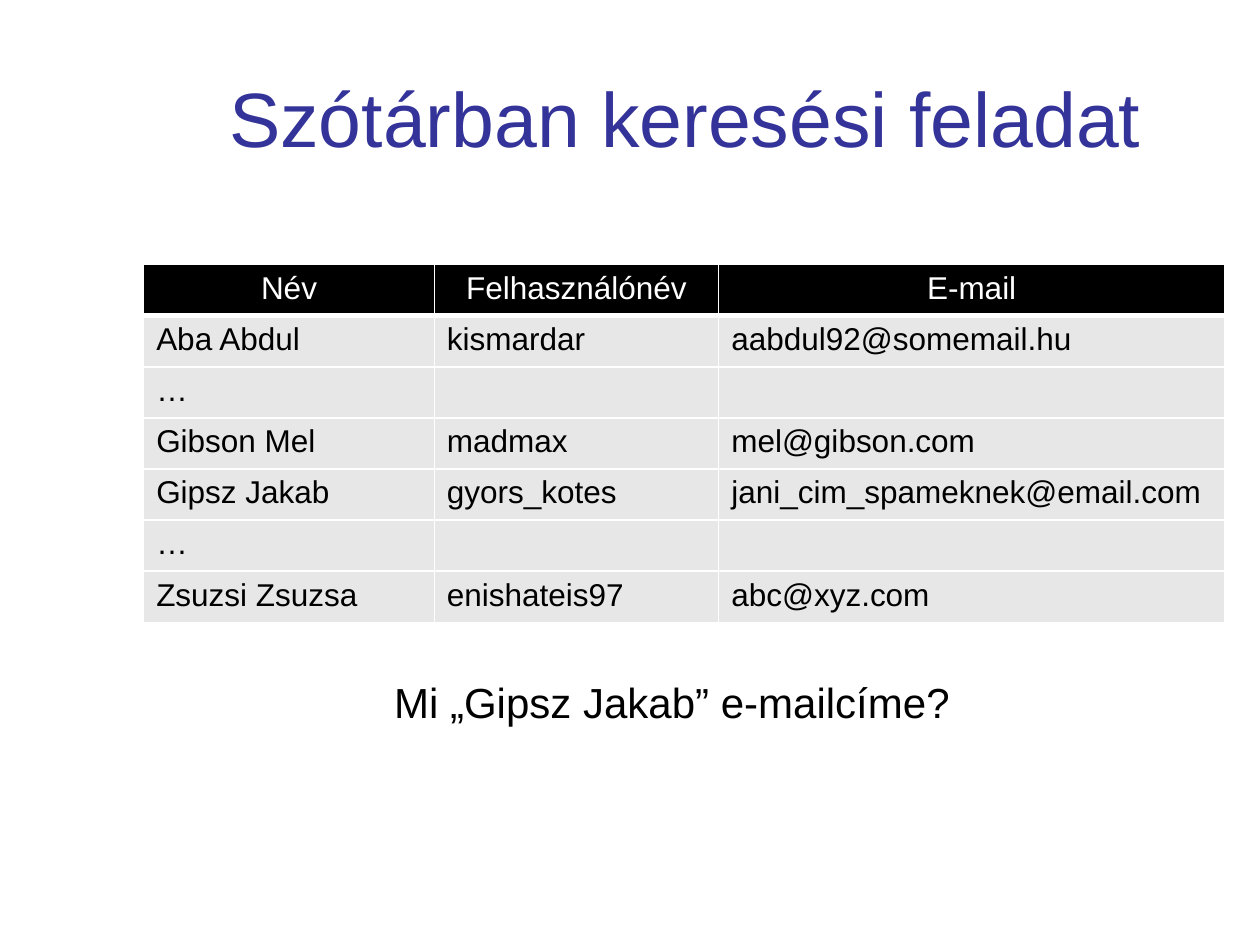
from lxml import etree
from pptx import Presentation
from pptx import util as u
from pptx.dml.color import RGBColor
from pptx.enum import text
from pptx.oxml.ns import qn

COLORS = {"title": "333399", "header": "000000", "body": "E7E7E7",
          "light": "FFFFFF", "dark": "000000"}
FONT = "Arial"
HEADERS = ["Név", "Felhasználónév", "E-mail"]
PEOPLE = [
    ["Aba Abdul", "kismardar", "aabdul92@somemail.hu"],
    ["…", "", ""],
    ["Gibson Mel", "madmax", "mel@gibson.com"],
    ["Gipsz Jakab", "gyors_kotes", "jani_cim_spameknek@email.com"],
    ["…", "", ""],
    ["Zsuzsi Zsuzsa", "enishateis97", "abc@xyz.com"],
]
COLUMN_WIDTHS = [2.31, 2.26, 4.02]


def rgb(name):
    """Return the named colour."""
    return RGBColor.from_string(COLORS[name])


def write(tf, words, size=18, color="dark", align=text.PP_ALIGN.LEFT):
    """Write one formatted paragraph into a text frame."""
    p = tf.paragraphs[0]
    p.alignment = align
    if words:
        r = p.add_run()
        r.text = words
        r.font.name = FONT
        r.font.size = u.Pt(size)
        r.font.color.rgb = rgb(color)


def set_borders(cell, bottom=1):
    """Give a cell light borders with the given bottom width in points."""
    tc_pr = cell._tc.get_or_add_tcPr()
    for tag, width in (("lnL", 1), ("lnR", 1), ("lnT", 1), ("lnB", bottom)):
        ln = etree.SubElement(tc_pr, qn(f"a:{tag}"), w=str(u.Pt(width)))
        fill = etree.SubElement(ln, qn("a:solidFill"))
        etree.SubElement(fill, qn("a:srgbClr"), val=COLORS["light"])


def place_title(s, left, top, width, height):
    """Place the slide title in its box."""
    sp = s.shapes.title
    sp.left, sp.top = u.Inches(left), u.Inches(top)
    sp.width, sp.height = u.Inches(width), u.Inches(height)
    tf = sp.text_frame
    tf.vertical_anchor = text.MSO_ANCHOR.MIDDLE
    write(tf, "Szótárban keresési feladat", size=44, color="title",
          align=text.PP_ALIGN.CENTER)


def add_directory(s, left, top, width, height):
    """Add the table of people, scaled to its box."""
    rows = [HEADERS] + PEOPLE
    table = s.shapes.add_table(len(rows), len(HEADERS), u.Inches(left), u.Inches(top),
                               u.Inches(width), u.Inches(height)).table
    table.horz_banding = False
    for column, share in zip(table.columns, COLUMN_WIDTHS):
        column.width = u.Inches(width * share / sum(COLUMN_WIDTHS))
    for i, row in enumerate(rows):
        header = i == 0
        for j, words in enumerate(row):
            cell = table.cell(i, j)
            set_borders(cell, bottom=3 if header else 1)
            cell.fill.solid()
            cell.fill.fore_color.rgb = rgb("header" if header else "body")
            write(cell.text_frame, words, color="light" if header else "dark",
                  align=text.PP_ALIGN.CENTER if header else text.PP_ALIGN.LEFT)


def add_question(s, left, top, width, height):
    """Add the question below the table."""
    tf = s.shapes.add_textbox(u.Inches(left), u.Inches(top),
                              u.Inches(width), u.Inches(height)).text_frame
    tf.word_wrap = False
    tf.auto_size = text.MSO_AUTO_SIZE.SHAPE_TO_FIT_TEXT
    write(tf, "Mi „Gipsz Jakab” e-mailcíme?", size=24)


def main():
    """Build and save the slide."""
    prs = Presentation()
    prs.slide_width, prs.slide_height = u.Inches(10), u.Inches(7.5)
    s = prs.slides.add_slide(prs.slide_layouts[5])
    s.background.fill.solid()
    s.background.fill.fore_color.rgb = rgb("light")
    place_title(s, 1.38, 0.3, 8.12, 1.25)
    add_directory(s, 1.14, 2.1, 8.58, 2.84)
    add_question(s, 3.03, 5.32, 4.66, 0.5)
    prs.save("out.pptx")


if __name__ == "__main__":
    main()
